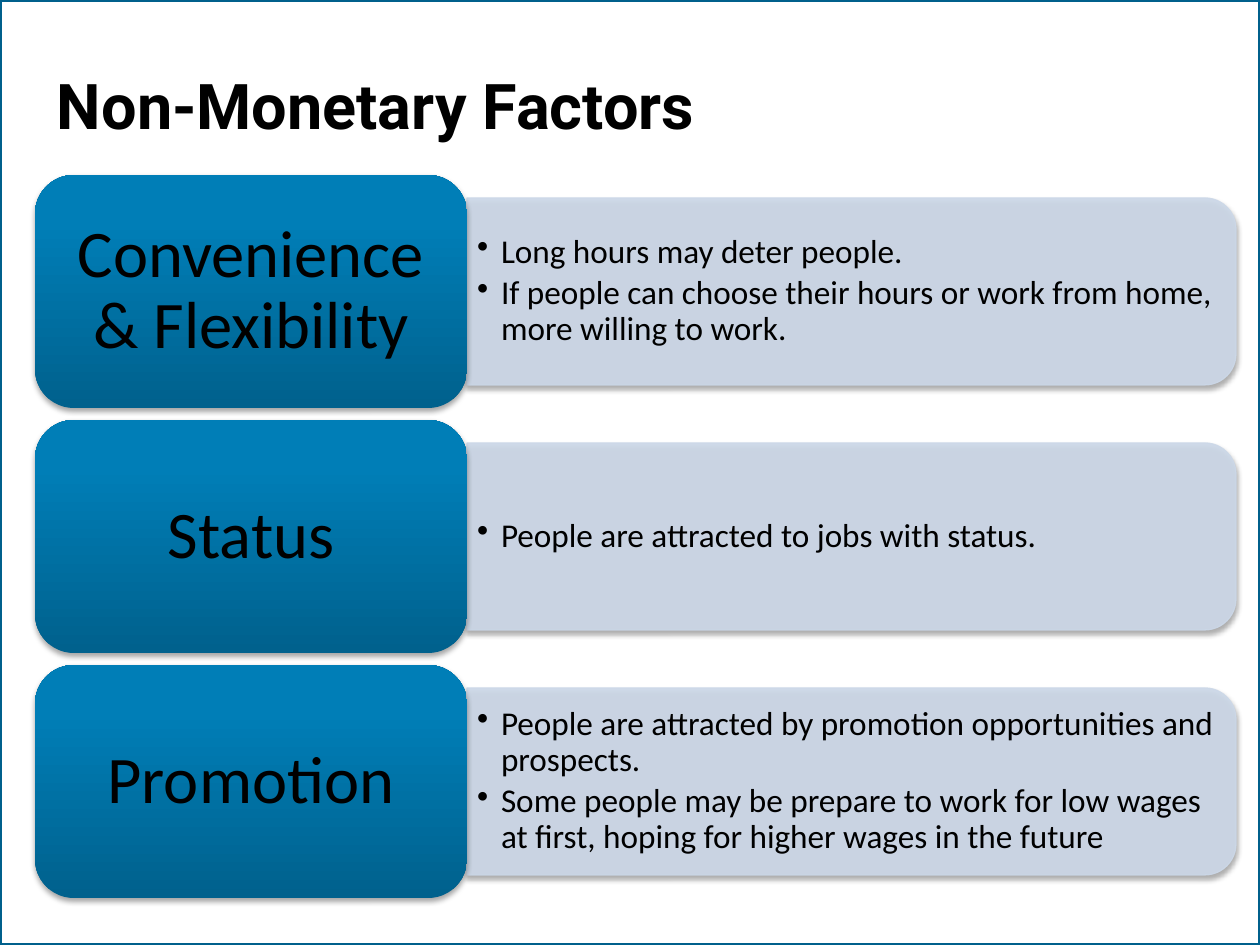
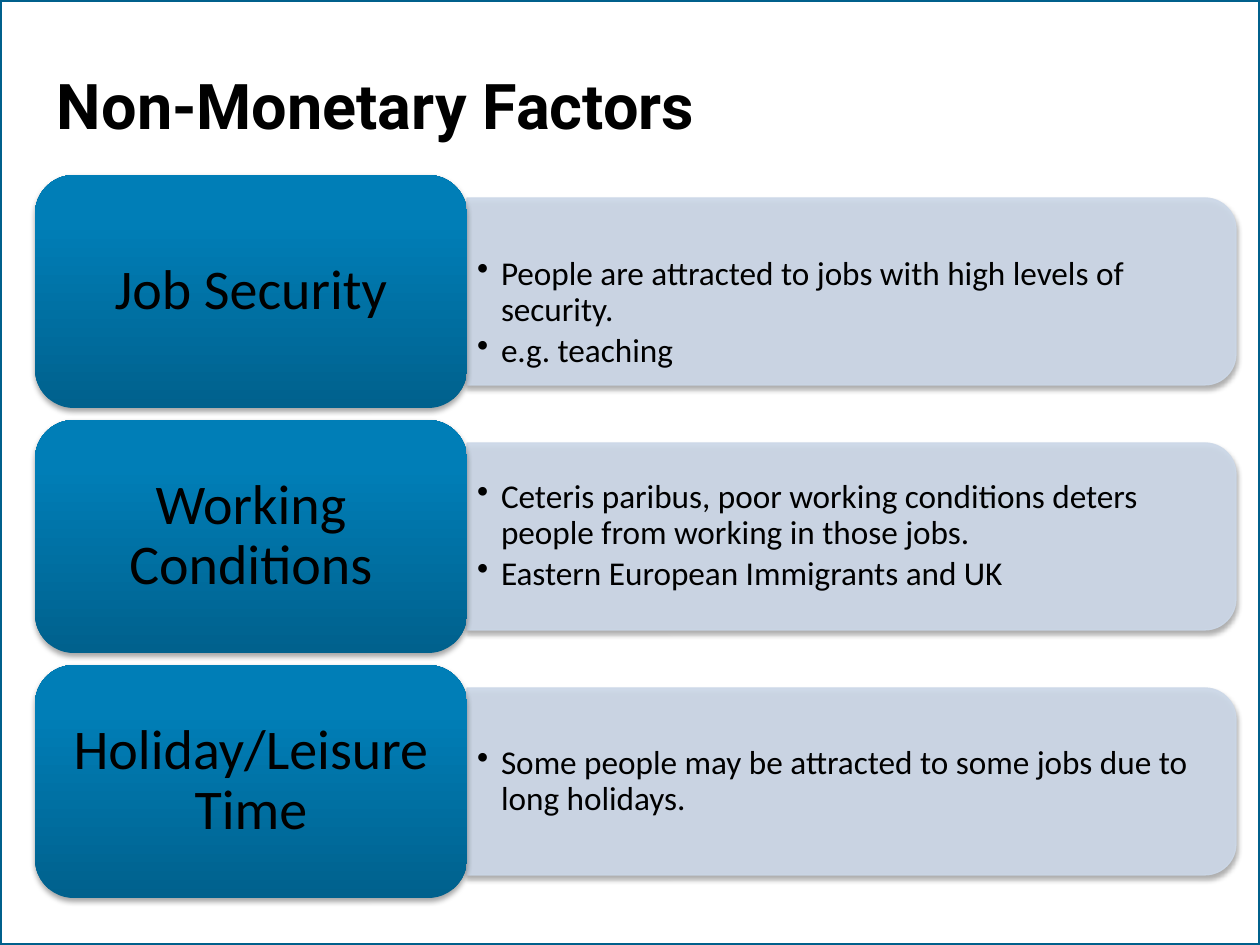
from lxml.etree import SubElement
from pptx import Presentation
from pptx.dml.color import RGBColor
from pptx.enum.shapes import MSO_SHAPE
from pptx.enum.text import MSO_ANCHOR, PP_ALIGN
from pptx.oxml.ns import qn
from pptx.util import Emu, Pt

PX = 914400 / 126
PAGE_WIDTH, PAGE_HEIGHT = 1260, 945

TITLE = "Non-Monetary Factors"
CONTENTS = [
    dict(size=38, inset=20, factors=[
        ("Convenience & Flexibility", [
            "Long hours may deter people.",
            "If people can choose their hours or work from home, more willing to work."]),
        ("Status", ["People are attracted to jobs with status."]),
        ("Promotion", [
            "People are attracted by promotion opportunities and prospects.",
            "Some people may be prepare to work for low wages at first, "
            "hoping for higher wages in the future"]),
    ]),
    dict(size=32, inset=16, lowered="Job Security", factors=[
        ("Job Security", [
            "People are attracted to jobs with high levels of security.",
            "e.g. teaching"]),
        ("Working Conditions", [
            "Ceteris paribus, poor working conditions deters people from working in those jobs.",
            "Eastern European Immigrants and UK"]),
        ("Holiday/Leisure Time", [
            "Some people may be attracted to some jobs due to long holidays."]),
    ]),
]


def px(length):
    return Emu(round(length * PX))


def color(value):
    return RGBColor.from_string(value)


def add_element(parent, tag, **attributes):
    return SubElement(parent, qn(tag), {key: str(value) for key, value in attributes.items()})


def write_text(frame, lines, font="Calibri", size=19, bold=False, align=PP_ALIGN.LEFT,
               line_spacing=0.9, gap=3, bullet_indent=0, insets=(10, 5, 10, 5)):
    """Fill a frame with one paragraph per line; insets are left, top, right, bottom."""
    frame.word_wrap = True
    frame.vertical_anchor = MSO_ANCHOR.MIDDLE
    (frame.margin_left, frame.margin_top,
     frame.margin_right, frame.margin_bottom) = map(px, insets)
    for index, line in enumerate(lines):
        para = frame.add_paragraph() if index else frame.paragraphs[0]
        if bullet_indent:
            properties = para._p.get_or_add_pPr()
            properties.set("marL", str(px(bullet_indent)))
            properties.set("indent", str(px(-bullet_indent)))
            add_element(properties, "a:buChar", char="•")
        para.alignment = align
        para.line_spacing = line_spacing
        if index:
            para.space_before = Pt(gap)
        span = para.add_run()
        span.text = line
        span.font.name = font
        span.font.size = Pt(size)
        span.font.bold = bold
        span.font.color.rgb = color(FactorDeck.INK)


class FactorDeck:
    INK = "000000"
    PAPER = "FFFFFF"
    FRAME = "00608C"
    PANEL = "CCD8E8"
    CARD_STOPS = [(0, "00618D"), (80, "007EB7"), (100, "007FB8")]

    CARD_LEFT, CARD_WIDTH, CARD_HEIGHT = 35, 432, 233
    PANEL_WIDTH, PANEL_HEIGHT = 769, 187
    TEXT_WIDTH, TEXT_HEIGHT = 760, 169
    FIRST_ROW, ROW_PITCH = 175, 245

    def __init__(self):
        self.deck = Presentation()
        self.deck.slide_width, self.deck.slide_height = px(PAGE_WIDTH), px(PAGE_HEIGHT)
        self.page = None

    def shape(self, kind, left, top, width, height):
        shape = self.page.shapes.add_shape(kind, px(left), px(top), px(width), px(height))
        shape.shadow.inherit = False
        return shape

    def text_box(self, left, top, width, height, lines, **text_format):
        box = self.page.shapes.add_textbox(px(left), px(top), px(width), px(height))
        write_text(box.text_frame, lines, **text_format)

    def cast_shadow(self, shape):
        effects = shape._element.spPr.find(qn("a:effectLst"))
        shadow = add_element(effects, "a:outerShdw", blurRad=Pt(3.1), dist=Pt(1.8),
                             dir=5400000, rotWithShape=0)
        tint = add_element(shadow, "a:srgbClr", val=self.INK)
        add_element(tint, "a:alpha", val=35000)

    def add_page(self, title):
        self.page = self.deck.slides.add_slide(self.deck.slide_layouts[6])
        border = self.shape(MSO_SHAPE.RECTANGLE, 0, 0, PAGE_WIDTH, PAGE_HEIGHT)
        border.fill.solid()
        border.fill.fore_color.rgb = color(self.PAPER)
        border.line.color.rgb = color(self.FRAME)
        border.line.width = Pt(2)
        self.text_box(44, 26, 1134, 157, [title], font="Roboto", size=36, bold=True,
                      line_spacing=1.0, insets=(13, 6, 13, 6))

    def panel(self, left, middle):
        """Draw a panel with rounded right corners: an upright shape turned by 90 degrees."""
        width, height = self.PANEL_HEIGHT, self.PANEL_WIDTH
        panel = self.shape(MSO_SHAPE.ROUND_2_SAME_RECTANGLE,
                           left + (height - width) / 2, middle - height / 2, width, height)
        panel.rotation = 90
        panel.fill.solid()
        panel.fill.fore_color.rgb = color(self.PANEL)
        panel.line.color.rgb = color(self.PANEL)
        panel.line.width = Pt(0.75)
        for tint in list(panel._element.spPr.iter(qn("a:srgbClr"))):
            add_element(tint, "a:alpha", val=90000)
        self.cast_shadow(panel)

    def card(self, top, label, size, inset):
        card = self.shape(MSO_SHAPE.ROUNDED_RECTANGLE, self.CARD_LEFT, top,
                          self.CARD_WIDTH, self.CARD_HEIGHT)
        card.fill.gradient()
        card.fill.gradient_angle = 90
        stops = card._element.spPr.find(".//" + qn("a:gsLst"))
        for stop in list(stops):
            stops.remove(stop)
        for percent, value in self.CARD_STOPS:
            stop = add_element(stops, "a:gs", pos=percent * 1000)
            add_element(stop, "a:srgbClr", val=value)
        card.line.fill.background()
        self.cast_shadow(card)
        write_text(card.text_frame, [label], size=size, align=PP_ALIGN.CENTER,
                   insets=(inset, inset // 2, inset, inset // 2))

    def factor_row(self, row, label, points, size, inset, lowered):
        top = self.FIRST_ROW + row * self.ROW_PITCH
        middle = top + self.CARD_HEIGHT / 2
        left = self.CARD_LEFT + self.CARD_WIDTH
        self.panel(left, middle)
        self.text_box(left, middle - self.TEXT_HEIGHT / 2, self.TEXT_WIDTH, self.TEXT_HEIGHT,
                      points, bullet_indent=24, insets=(10, 48 if lowered else 5, 10, 5))
        self.card(top, label, size, inset)


def main():
    factor_deck = FactorDeck()
    for content in CONTENTS:
        factor_deck.add_page(TITLE)
        for row, (label, points) in enumerate(content["factors"]):
            factor_deck.factor_row(row, label, points, content["size"], content["inset"],
                                   lowered=label == content.get("lowered"))
    factor_deck.deck.save("out.pptx")


if __name__ == "__main__":
    main()
